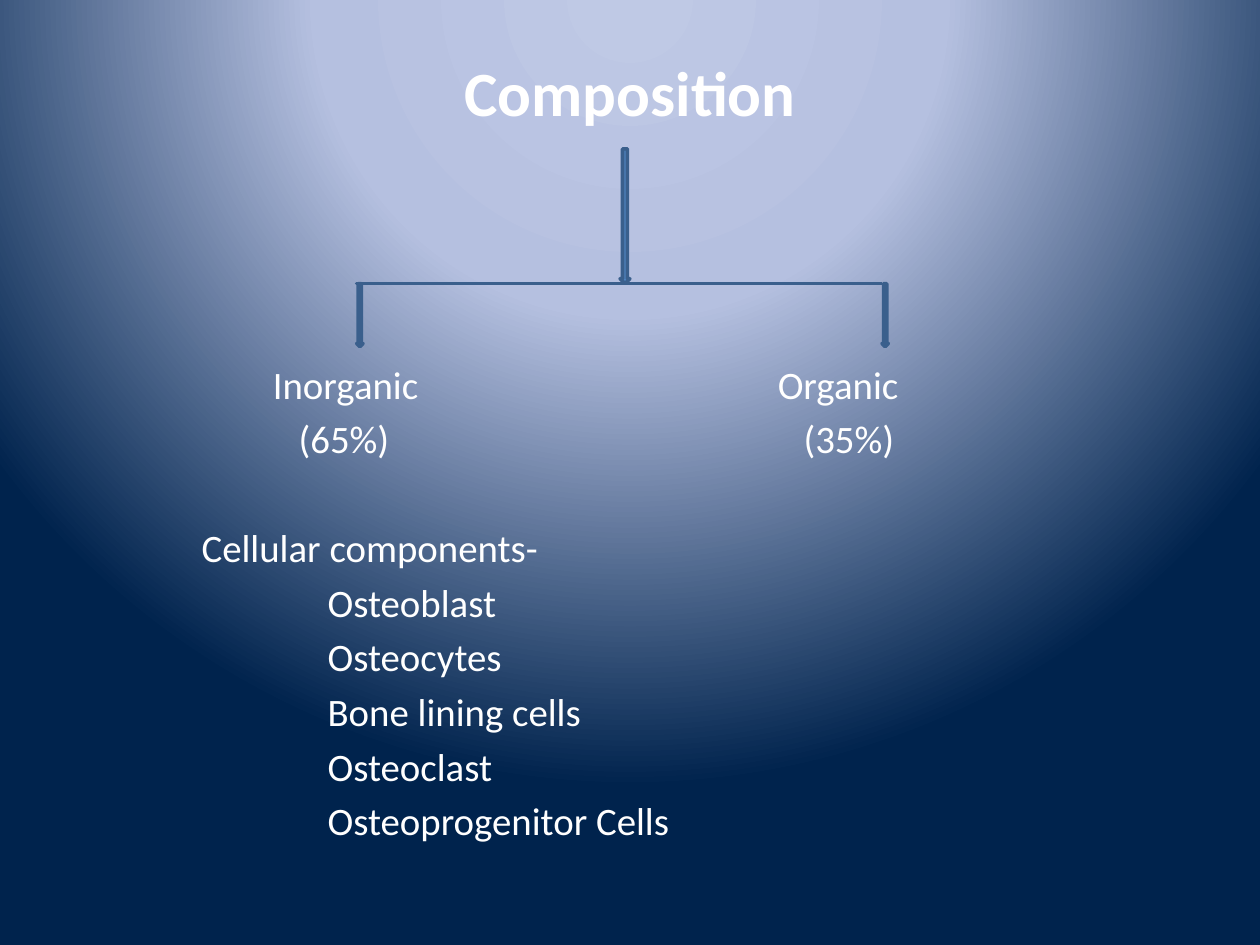
from dataclasses import dataclass

from lxml.etree import SubElement
from pptx import Presentation
from pptx.dml.color import RGBColor
from pptx.enum.shapes import MSO_SHAPE
from pptx.enum.text import MSO_ANCHOR, MSO_AUTO_SIZE, PP_ALIGN
from pptx.oxml.ns import qn
from pptx.util import Cm, Pt


@dataclass(frozen=True)
class Theme:
    font: str = "Calibri"
    text: str = "FFFFFF"
    fill: str = "4F81BD"
    outline: str = "3A5F8C"
    glow: tuple = ((0, "BFC9E5"), (40, "B5C0E0"), (100, "00234D"))
    title_size: float = 36
    body_size: float = 22.2
    gap: float = 4.6


THEME = Theme()


def set_background(s):
    """Radial glow centred above the slide."""
    s.background.fill.gradient()
    grad = s.element.find(".//" + qn("a:gradFill"))
    for child in list(grad):
        grad.remove(child)
    stops = SubElement(grad, qn("a:gsLst"))
    for pos, color in THEME.glow:
        gs = SubElement(stops, qn("a:gs"), pos=str(pos * 1000))
        SubElement(gs, qn("a:srgbClr"), val=color)
    radial = SubElement(grad, qn("a:path"), path="circle")
    SubElement(radial, qn("a:fillToRect"), l="50000", t="-80000", r="50000", b="180000")


def place(sp, left, top, width, height, anchor=MSO_ANCHOR.TOP):
    sp.left, sp.top, sp.width, sp.height = (Cm(v) for v in (left, top, width, height))
    tf = sp.text_frame
    tf.word_wrap = True
    tf.auto_size = MSO_AUTO_SIZE.NONE
    tf.vertical_anchor = anchor
    return tf


def add_run(p, text, size, bold=False):
    r = p.add_run()
    r.text = text
    r.font.name = THEME.font
    r.font.size = Pt(size)
    r.font.bold = bold
    r.font.color.rgb = RGBColor.from_string(THEME.text)


def add_line(tf, text, indent=0):
    """One body paragraph, indented in cm."""
    p = tf.paragraphs[0] if not tf.text else tf.add_paragraph()
    p.alignment = PP_ALIGN.LEFT
    p.space_before = Pt(THEME.gap)
    pPr = p._p.get_or_add_pPr()
    pPr.set("marL", str(Cm(indent)))
    pPr.set("indent", "0")
    add_run(p, text, THEME.body_size)


def add_label(s, left, name, share):
    """Branch name with its share set in below it."""
    sp = s.shapes.add_textbox(0, 0, 0, 0)
    tf = place(sp, left, 7.14, 4.5, 2.5)
    add_line(tf, name)
    add_line(tf, share, indent=0.52)


def add_branch(s, kind, left, top, width, height):
    sp = s.shapes.add_shape(kind, Cm(left), Cm(top), Cm(width), Cm(height))
    sp.shadow.inherit = False
    sp.fill.solid()
    sp.fill.fore_color.rgb = RGBColor.from_string(THEME.fill)
    sp.line.color.rgb = RGBColor.from_string(THEME.outline)
    sp.line.width = Pt(2)
    return sp


def main():
    prs = Presentation()
    prs.slide_width, prs.slide_height = Cm(25.4), Cm(19.05)
    s = prs.slides.add_slide(prs.slide_layouts[0])
    set_background(s)

    # Title
    tf = place(s.shapes.title, 1.91, -0.2, 21.59, 4.09, MSO_ANCHOR.MIDDLE)
    p = tf.paragraphs[0]
    p.alignment = PP_ALIGN.CENTER
    add_run(p, "Composition", THEME.title_size, bold=True)

    # List of cells
    tf = place(s.placeholders[1], 3.81, 10.43, 17.78, 7.12)
    add_line(tf, "Cellular components-")
    for cell in ("Osteoblast", "Osteocytes", "Bone lining cells",
                 "Osteoclast", "Osteoprogenitor Cells"):
        add_line(tf, cell, indent=2.54)

    # Tree: stem and crossbar
    add_branch(s, MSO_SHAPE.DOWN_ARROW, 12.5, 3, 0.2, 2.72)
    bar = add_branch(s, MSO_SHAPE.MATH_MINUS, 5.28, 4.45, 14.4, 2.54)
    bar.adjustments[0] = 0

    # One arrow and label per branch
    for arrow_left, label_left, name, share in (
            (7.19, 5.25, "Inorganic", "(65%)"),
            (17.78, 15.43, "Organic", "(35%)")):
        add_branch(s, MSO_SHAPE.DOWN_ARROW, arrow_left, 5.72, 0.13, 1.27)
        add_label(s, label_left, name, share)

    prs.save("out.pptx")


if __name__ == "__main__":
    main()
